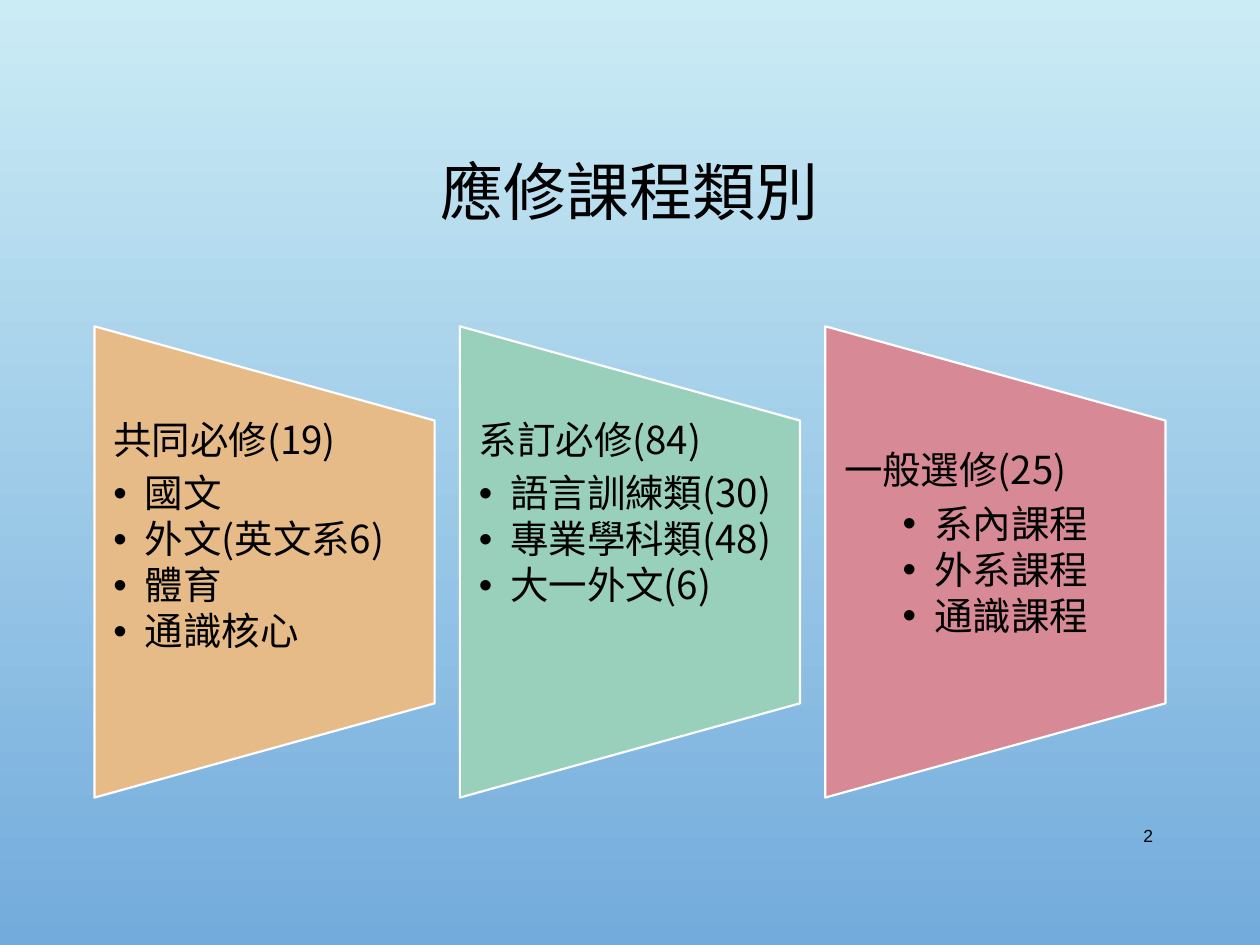
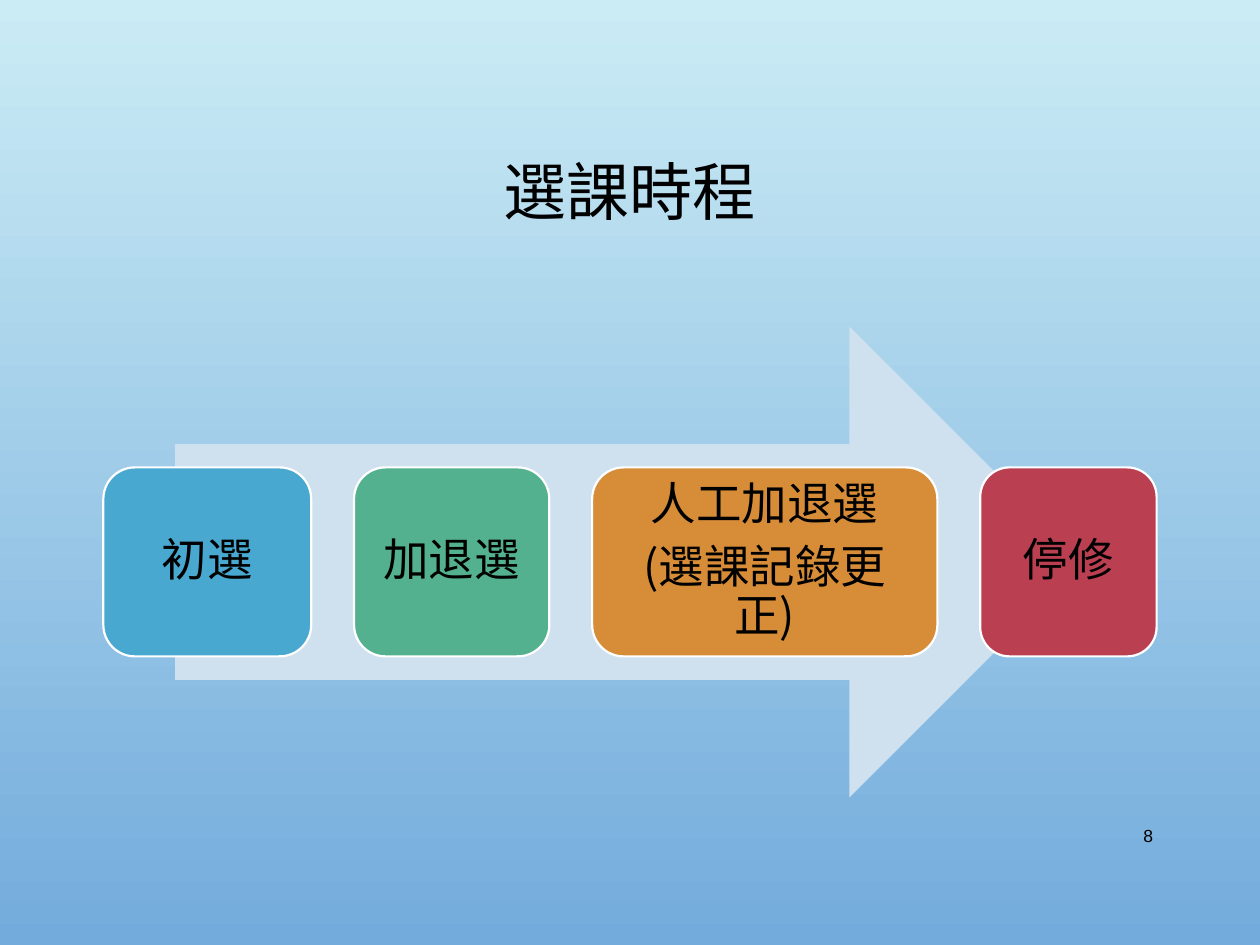
from typing import NamedTuple

from lxml.etree import SubElement
from pptx import Presentation
from pptx.dml.color import RGBColor
from pptx.enum.shapes import MSO_SHAPE
from pptx.enum.text import MSO_ANCHOR, PP_ALIGN
from pptx.oxml.ns import qn
from pptx.presentation import Presentation as Deck
from pptx.shapes.autoshape import Shape
from pptx.slide import Slide
from pptx.text.text import TextFrame
from pptx.util import Inches, Pt

BLACK = RGBColor(0x00, 0x00, 0x00)
WHITE = RGBColor(0xFF, 0xFF, 0xFF)
SKY = RGBColor(0xCB, 0xEC, 0xF5)
SEA = RGBColor(0x73, 0xAB, 0xDC)
SAND = RGBColor(0xE7, 0xBB, 0x88)
MINT = RGBColor(0x98, 0xD0, 0xBC)
ROSE = RGBColor(0xD7, 0x8A, 0x95)
MIST = RGBColor(0xCF, 0xE1, 0xEE)
BLUE = RGBColor(0x48, 0xA8, 0xD0)
GREEN = RGBColor(0x53, 0xB1, 0x8F)
AMBER = RGBColor(0xD7, 0x8D, 0x38)
RED = RGBColor(0xBA, 0x3F, 0x51)

CJK = "Noto Sans CJK SC"
LATIN = "Arial"


class Box(NamedTuple):
    left: float
    top: float
    width: float
    height: float


class Style(NamedTuple):
    size: float
    font: str = CJK
    align: PP_ALIGN = PP_ALIGN.LEFT
    line: float = 0.9
    after: float = 0
    bullet: bool = False


class Group(NamedTuple):
    head: str
    items: list[str]
    color: RGBColor
    align: PP_ALIGN = PP_ALIGN.LEFT
    drop: float = 0


class Step(NamedTuple):
    lines: list[str]
    width: float
    color: RGBColor


TITLE = Style(36, align=PP_ALIGN.CENTER)
NUMBER = Style(10, LATIN, PP_ALIGN.RIGHT, 1)
HEAD = Style(22, after=7)
ITEM = Style(22, after=2.5, bullet=True)
LABEL = Style(26, align=PP_ALIGN.CENTER, after=8)

GROUPS = [
    Group("共同必修(19)", ["國文", "外文(英文系6)", "體育", "通識核心"], SAND),
    Group("系訂必修(84)", ["語言訓練類(30)", "專業學科類(48)", "大一外文(6)"], MINT),
    Group("一般選修(25)", ["系內課程", "外系課程", "通識課程"], ROSE,
          PP_ALIGN.CENTER, 0.24),
]
STEPS = [
    Step(["初選"], 1.65, BLUE),
    Step(["加退選"], 1.55, GREEN),
    Step(["人工加退選", "(選課記錄更正)"], 2.74, AMBER),
    Step(["停修"], 1.4, RED),
]


def place(box: Box) -> list[Inches]:
    return [Inches(side) for side in box]


def write(frame: TextFrame, lines: list[tuple[str, Style]]) -> None:
    frame.word_wrap = True
    for index, (text, style) in enumerate(lines):
        para = frame.add_paragraph() if index else frame.paragraphs[0]
        para.text = text
        para.alignment = style.align
        para.line_spacing = style.line
        para.space_after = Pt(style.after)
        if style.bullet:
            props = para._p.get_or_add_pPr()
            props.set("marL", str(Inches(0.25)))
            props.set("indent", str(-Inches(0.25)))
            SubElement(props, qn("a:buFont")).set("typeface", LATIN)
            SubElement(props, qn("a:buChar")).set("char", "•")
        font = para.font
        font.size = Pt(style.size)
        font.color.rgb = BLACK
        font.name = style.font
        SubElement(font._element, qn("a:ea")).set("typeface", style.font)


def inset(frame: TextFrame, side: float, top: float, base: float) -> None:
    frame.margin_left = frame.margin_right = Inches(side)
    frame.margin_top, frame.margin_bottom = Inches(top), Inches(base)


def add_text(slide: Slide, box: Box, lines: list[tuple[str, Style]],
             anchor: MSO_ANCHOR = MSO_ANCHOR.MIDDLE) -> TextFrame:
    frame = slide.shapes.add_textbox(*place(box)).text_frame
    frame.vertical_anchor = anchor
    write(frame, lines)
    return frame


def add_block(slide: Slide, kind: MSO_SHAPE, box: Box, color: RGBColor,
              edge: bool = True) -> Shape:
    shape = slide.shapes.add_shape(kind, *place(box))
    shape.shadow.inherit = False
    shape.fill.solid()
    shape.fill.fore_color.rgb = color
    if edge:
        shape.line.color.rgb = WHITE
        shape.line.width = Pt(1.25)
    else:
        shape.line.fill.background()
    return shape


def add_page(deck: Deck, title: str, number: int) -> Slide:
    slide = deck.slides.add_slide(deck.slide_layouts[6])
    fill = slide.background.fill
    fill.gradient()
    fill.gradient_angle = 270
    for stop, color in zip(fill.gradient_stops, (SKY, SEA)):
        stop.color.rgb = color
    add_text(slide, Box(0.75, 0.68, 8.5, 1.74), [(title, TITLE)])
    add_text(slide, Box(8.62, 6.43, 0.63, 0.4), [(str(number), NUMBER)])
    return slide


def draw_groups(slide: Slide) -> None:
    for index, group in enumerate(GROUPS):
        left = 0.75 + 2.9 * index
        panel = add_block(slide, MSO_SHAPE.FLOWCHART_MANUAL_OPERATION,
                          Box(left - 0.52, 3.11, 3.74, 2.7), group.color)
        panel.rotation = 270
        item = ITEM._replace(align=group.align)
        lines = [(group.head, HEAD)] + [(text, item) for text in group.items]
        frame = add_text(slide, Box(left, 3.34, 2.7, 2.25), lines, MSO_ANCHOR.TOP)
        inset(frame, 0.15, group.drop, 0)


def draw_steps(slide: Slide) -> None:
    add_block(slide, MSO_SHAPE.RIGHT_ARROW, Box(1.39, 2.59, 7.22, 3.74), MIST, False)
    left = 0.82
    for step in STEPS:
        block = add_block(slide, MSO_SHAPE.ROUNDED_RECTANGLE,
                          Box(left, 3.71, step.width, 1.5), step.color)
        frame = block.text_frame
        frame.vertical_anchor = MSO_ANCHOR.MIDDLE
        inset(frame, 0.11, 0.11, 0.11)
        write(frame, [(text, LABEL) for text in step.lines])
        left += step.width + 0.34


def main() -> None:
    deck = Presentation()
    deck.slide_width, deck.slide_height = Inches(10), Inches(7.5)
    draw_groups(add_page(deck, "應修課程類別", 2))
    draw_steps(add_page(deck, "選課時程", 8))
    deck.save("out.pptx")


if __name__ == "__main__":
    main()
